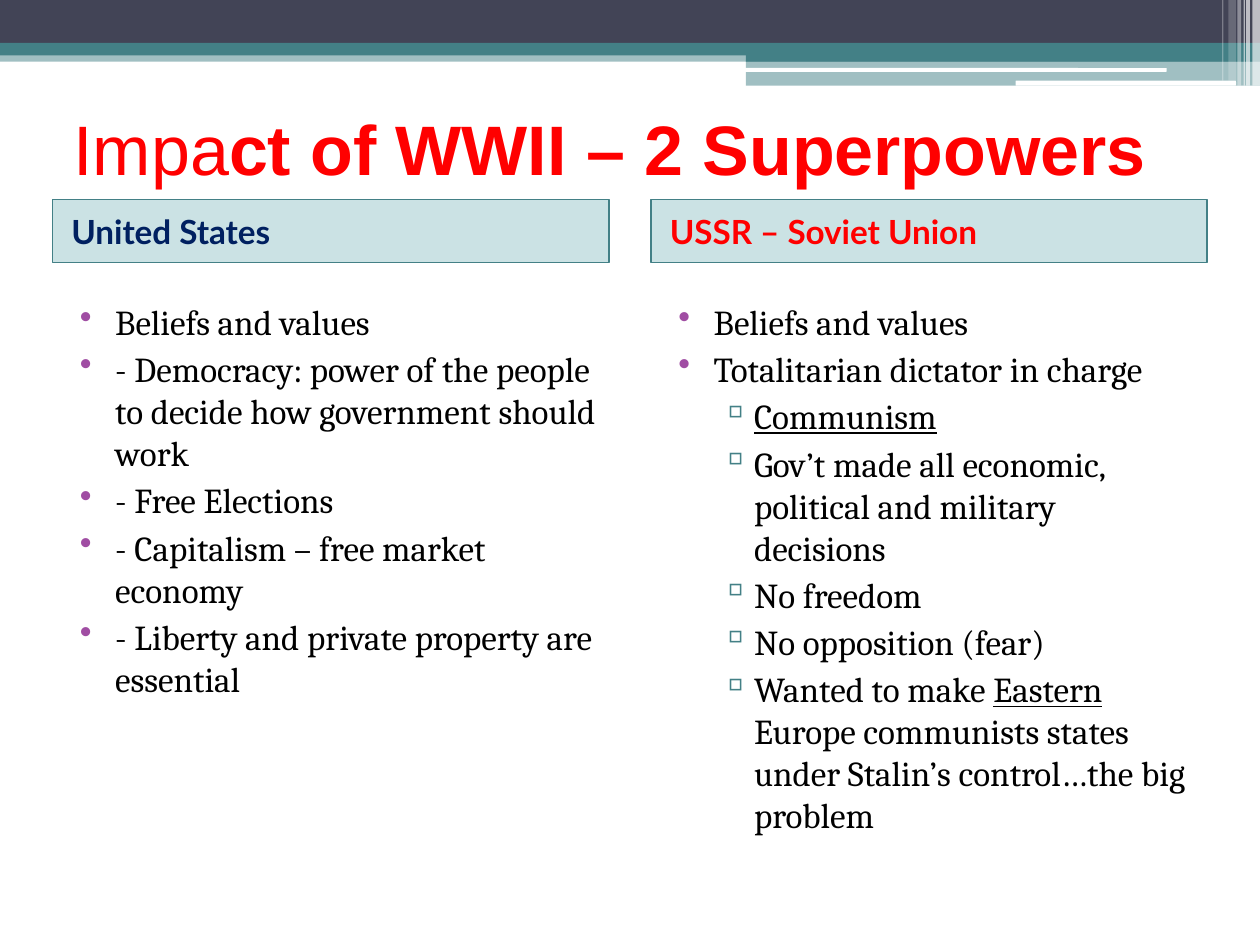
from typing import NamedTuple, Optional

import pptx
import pptx.dml.color
import pptx.enum.shapes
import pptx.enum.text
import pptx.oxml.ns
import pptx.util
from lxml import etree

RGBColor = pptx.dml.color.RGBColor
ShapeKind = pptx.enum.shapes.MSO_SHAPE

WHITE = RGBColor(0xFF, 0xFF, 0xFF)
BLACK = RGBColor(0x00, 0x00, 0x00)
RED = RGBColor(0xFF, 0x00, 0x00)
NAVY = RGBColor(0x00, 0x20, 0x60)
SLATE = RGBColor(0x42, 0x44, 0x56)
TEAL = RGBColor(0x43, 0x80, 0x86)
AQUA = RGBColor(0x32, 0x8E, 0x97)
PURPLE = RGBColor(0xA0, 0x4D, 0xA3)

SLIDE_WIDTH = pptx.util.Inches(10)
SLIDE_HEIGHT = pptx.util.Inches(7.5)


class Area(NamedTuple):
    column: float
    row: float
    columns: float
    rows: float


class Grid(NamedTuple):
    columns: int
    rows: int

    def place(self, area: Area) -> tuple:
        across, down = SLIDE_WIDTH / self.columns, SLIDE_HEIGHT / self.rows
        return (round(area.column * across), round(area.row * down),
                round(area.columns * across), round(area.rows * down))


class Band(NamedTuple):
    area: Area
    color: RGBColor
    opacity: int = 100
    rounded: bool = False


class Level(NamedTuple):
    indent: float
    hanging: float
    bullet: str
    color: RGBColor


class Span(NamedTuple):
    text: str
    underline: Optional[bool] = None
    bold: Optional[bool] = None


class Item(NamedTuple):
    level: int
    spans: list


class Side(NamedTuple):
    column: float
    heading: str
    color: RGBColor
    items: list


FINE_GRID = Grid(1000, 750)    # banner details
PAGE_GRID = Grid(120, 90)      # title and the two columns
SIDE_COLUMNS = 53

LEVELS = [Level(0.4, 0.28, "•", PURPLE), Level(0.72, 0.27, "▫", TEAL)]

BANDS = [
    Band(Area(0, 40, 1000, 9), TEAL, 50),
    Band(Area(0, 0, 1000, 34), SLATE),
    Band(Area(0, 34, 1000, 10), TEAL),
    Band(Area(592, 39, 408, 10), TEAL),
    Band(Area(592, 48, 408, 20), TEAL, 50),
    Band(Area(591, 54, 335, 3), WHITE, rounded=True),
    Band(Area(806, 64, 175, 4), WHITE, rounded=True),
]
# Translucent stripes at the right edge: column, width, height, opacity
STRIPES = [(994, 6, 68, 65), (989, 3, 68, 65), (987, 1, 68, 60),
           (982, 3, 68, 40), (975, 6, 64, 20), (970, 1, 64, 30)]
BANDS += [Band(Area(column, 0, width, height), WHITE, opacity)
          for column, width, height, opacity in STRIPES]

TITLE = [Span("Impa"), Span("ct of WWII – 2 Superpowers ", bold=True)]

SIDES = [
    Side(5, "United States", NAVY, [
        Item(0, [Span("Beliefs and values")]),
        Item(0, [Span("- Democracy: power of the people to decide how "
                      "government should work")]),
        Item(0, [Span("- Free Elections")]),
        Item(0, [Span("- Capitalism – free market economy")]),
        Item(0, [Span("- Liberty and private property are essential")]),
    ]),
    Side(62, "USSR – Soviet Union", RED, [
        Item(0, [Span("Beliefs and values")]),
        Item(0, [Span("Totalitarian dictator in charge")]),
        Item(1, [Span("Communism", underline=True)]),
        Item(1, [Span("Gov’t made all economic, political and military "
                      "decisions")]),
        Item(1, [Span("No freedom")]),
        Item(1, [Span("No opposition (fear)")]),
        Item(1, [Span("Wanted to make "), Span("Eastern ", underline=True),
                 Span("Europe communists states under Stalin’s control…"
                      "the big problem")]),
    ]),
]


def add_band(page, grid: Grid, band: Band):
    kind = ShapeKind.ROUNDED_RECTANGLE if band.rounded else ShapeKind.RECTANGLE
    box = page.shapes.add_shape(kind, *grid.place(band.area))
    box.shadow.inherit = False
    box.fill.solid()
    box.fill.fore_color.rgb = band.color
    box.line.fill.background()
    if band.opacity < 100:
        color = box.fill._xPr.find(".//" + pptx.oxml.ns.qn("a:srgbClr"))
        alpha = etree.SubElement(color, pptx.oxml.ns.qn("a:alpha"))
        alpha.set("val", str(band.opacity * 1000))
    return box


def add_text_box(page, area: Area):
    frame = page.shapes.add_textbox(*PAGE_GRID.place(area)).text_frame
    frame.word_wrap = True
    return frame


def set_font(para, name: str, size: float, color: RGBColor) -> None:
    para.font.name = name
    para.font.size = pptx.util.Pt(size)
    para.font.color.rgb = color


def add_spans(para, spans: list) -> None:
    for span in spans:
        run = para.add_run()
        run.text = span.text
        run.font.underline = span.underline
        run.font.bold = span.bold


def set_bullet(para, level: Level) -> None:
    properties = para._p.get_or_add_pPr()
    properties.set("marL", str(pptx.util.Inches(level.indent)))
    properties.set("indent", str(-pptx.util.Inches(level.hanging)))
    color = etree.SubElement(properties, pptx.oxml.ns.qn("a:buClr"))
    etree.SubElement(color, pptx.oxml.ns.qn("a:srgbClr")).set(
        "val", str(level.color))
    etree.SubElement(properties, pptx.oxml.ns.qn("a:buChar")).set(
        "char", level.bullet)


def add_title(page) -> None:
    frame = add_text_box(page, Area(4, 7, 110, 14))
    frame.vertical_anchor = pptx.enum.text.MSO_ANCHOR.MIDDLE
    para = frame.paragraphs[0]
    para.alignment = pptx.enum.text.PP_ALIGN.CENTER
    set_font(para, "Arial", 40, RED)
    add_spans(para, TITLE)


def add_side(page, side: Side) -> None:
    # Heading bar
    bar = Band(Area(side.column, 19, SIDE_COLUMNS, 6), AQUA, 25)
    box = add_band(page, PAGE_GRID, bar)
    box.line.color.rgb = TEAL
    box.line.width = pptx.util.Pt(1)
    frame = box.text_frame
    frame.margin_left = pptx.util.Inches(0.15)
    frame.vertical_anchor = pptx.enum.text.MSO_ANCHOR.MIDDLE
    para = frame.paragraphs[0]
    para.alignment = pptx.enum.text.PP_ALIGN.LEFT
    set_font(para, "Lato", 19, side.color)
    para.font.bold = True
    add_spans(para, [Span(side.heading)])

    # Bulleted list
    frame = add_text_box(page, Area(side.column, 28, SIDE_COLUMNS, 58.5))
    for index, item in enumerate(side.items):
        para = frame.add_paragraph() if index else frame.paragraphs[0]
        para.level = item.level
        set_bullet(para, LEVELS[item.level])
        if index:
            para.space_before = pptx.util.Pt(3)
        set_font(para, "Cambria", 20, BLACK)
        add_spans(para, item.spans)


def main() -> None:
    deck = pptx.Presentation()
    deck.slide_width, deck.slide_height = SLIDE_WIDTH, SLIDE_HEIGHT
    page = deck.slides.add_slide(deck.slide_layouts[6])
    for band in BANDS:
        add_band(page, FINE_GRID, band)
    add_title(page)
    for side in SIDES:
        add_side(page, side)
    deck.save("out.pptx")


if __name__ == "__main__":
    main()
